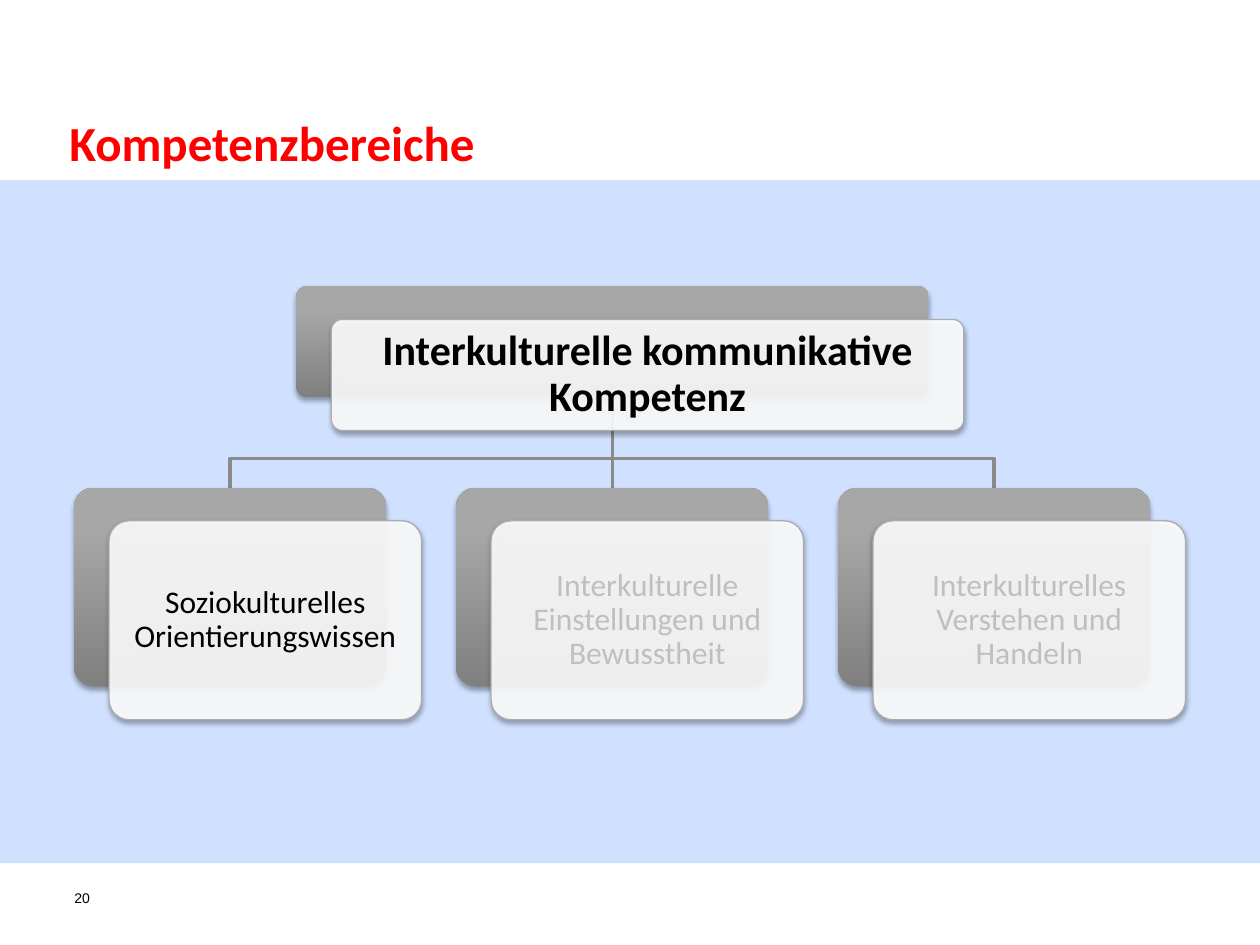
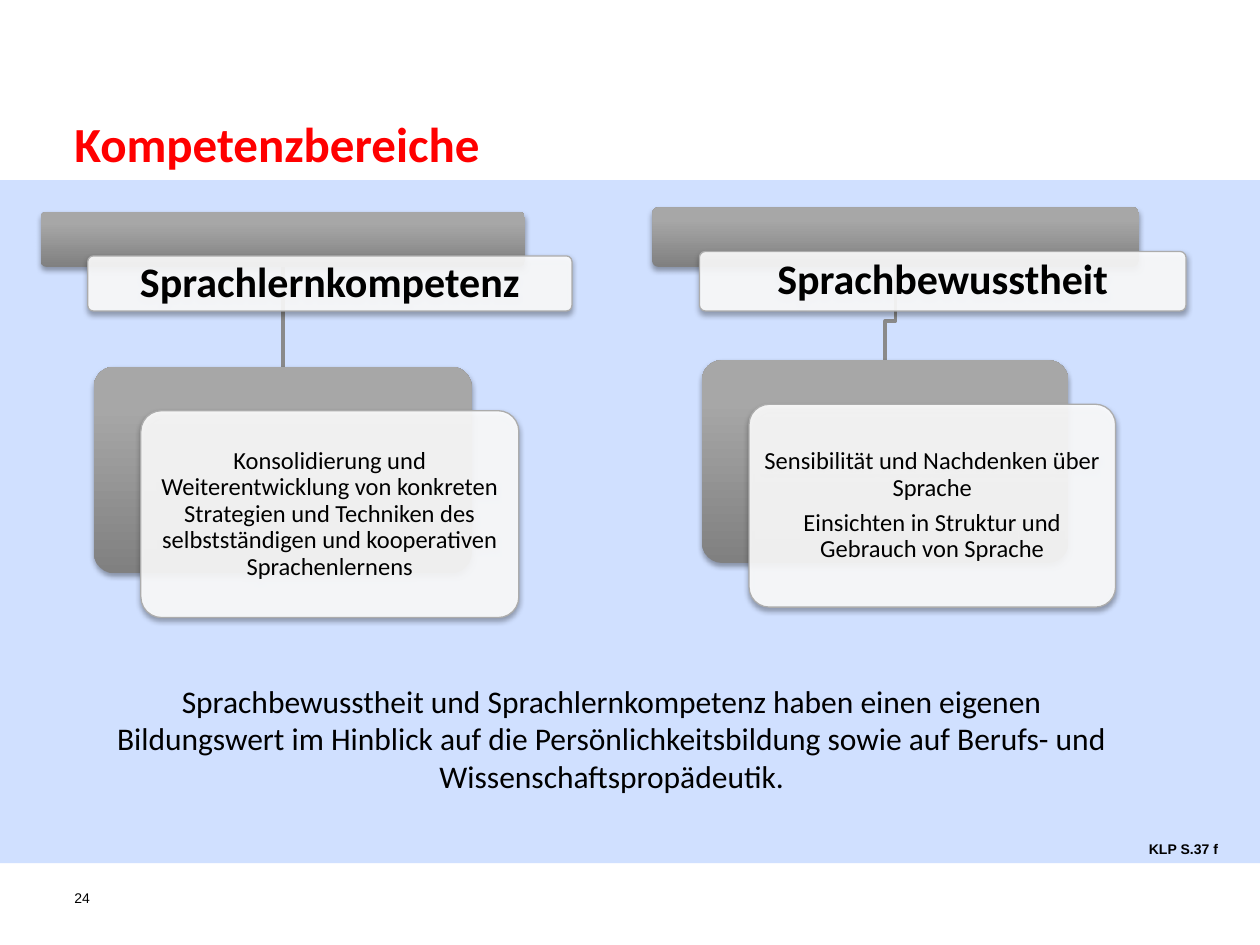
from pptx import Presentation
from pptx.dml.color import RGBColor
from pptx.enum.shapes import MSO_CONNECTOR as LINK, MSO_SHAPE as SHAPE
from pptx.enum.text import MSO_ANCHOR as ANCHOR, PP_ALIGN as ALIGN
from pptx.oxml import parse_xml
from pptx.oxml.ns import nsdecls, qn
from pptx.util import Cm, Pt

RED, BLACK, WHITE, PALE = "FF0000", "000000", "FFFFFF", "BFBFBF"
BLUE, DARK, LIGHT, EDGE, WIRE = "6699FF", "808080", "A7A7A7", "ACACAC", "8A8A8A"
rgb = RGBColor.from_string
A_NS = nsdecls("a")
SHADOW = (f'<a:outerShdw {A_NS} blurRad="39370" dist="22860" dir="5400000" rotWithShape="0">'
          '<a:srgbClr val="000000"><a:alpha val="35000"/></a:srgbClr></a:outerShdw>')


def write(shape, text, size=18, color=BLACK, font="Calibri", bold=False,
          align=ALIGN.LEFT, anchor=ANCHOR.TOP, pad=(0, 0), lead=None):
    frame = shape.text_frame
    frame.word_wrap = True
    frame.vertical_anchor = anchor
    frame.margin_left = frame.margin_right = Cm(pad[0])
    frame.margin_top = frame.margin_bottom = Cm(pad[1])
    for i, line in enumerate(text.split("\n")):
        para = frame.add_paragraph() if i else frame.paragraphs[0]
        para.text = line
        para.alignment = align
        if lead:
            para.line_spacing = lead
        if i:
            para.space_before = Pt(size * 0.35)
        para.font.size = Pt(size)
        para.font.name = font
        para.font.bold = bold
        para.font.color.rgb = rgb(color)


def add(slide, kind, box, fill, alpha=100):
    shape = slide.shapes.add_shape(kind, *map(Cm, box))
    shape.shadow.inherit = False
    shape.line.fill.background()
    shape.fill.solid()
    shape.fill.fore_color.rgb = rgb(fill)
    if alpha < 100:
        tint = shape.fill._xPr.find(".//" + qn("a:srgbClr"))
        tint.append(parse_xml(f'<a:alpha {A_NS} val="{alpha * 1000}"/>'))
    if kind == SHAPE.ROUNDED_RECTANGLE:
        shape.adjustments[0] = 0.1
        shape._element.spPr.find(qn("a:effectLst")).append(parse_xml(SHADOW))
    return shape


# Trees: head box and text, then the boxes, texts and colours below it
topics = ["Soziokulturelles Orientierungswissen",
          "Interkulturelle Einstellungen und Bewusstheit",
          "Interkulturelles Verstehen und Handeln"]
areas = [((1.49 + 7.7 * i, 9.83, 6.3, 4.01), topic, PALE if i else BLACK)
         for i, topic in enumerate(topics)]
culture = ((5.97, 5.77, 12.75, 2.24), "Interkulturelle kommunikative Kompetenz", areas)
learning = ((0.82, 4.27, 9.76, 1.11), "Sprachlernkompetenz", [
    ((1.89, 7.39, 7.62, 4.17),
     "Konsolidierung und Weiterentwicklung von konkreten Strategien und Techniken "
     "des selbstständigen und kooperativen Sprachenlernens", BLACK)])
aware = ((13.15, 4.18, 9.81, 1.2), "Sprachbewusstheit", [
    ((14.15, 7.26, 7.39, 4.09),
     "Sensibilität und Nachdenken über Sprache\n"
     "Einsichten in Struktur und Gebrauch von Sprache", BLACK)])

# Pages: number, title place, card shift, text size, text margin, trees
pages = [("20", (1.4, 2.26), (0.71, 0.67), 18, 0.18, [culture]),
         ("24", (1.5, 2.29), (0.95, 0.89), 14, 0.15, [learning, aware])]

deck = Presentation()
deck.slide_width, deck.slide_height = Cm(25.4), Cm(19.05)

for number, place, shift, size, pad, trees in pages:
    # Band, title and page number
    slide = deck.slides.add_slide(deck.slide_layouts[6])
    shapes = slide.shapes
    add(slide, SHAPE.RECTANGLE, (0, 3.63, 25.4, 13.77), BLUE, alpha=30)
    title = shapes.add_textbox(*map(Cm, place), Cm(22.4), Cm(1.2))
    write(title, "Kompetenzbereiche", size=28, color=RED, bold=True)
    page = shapes.add_textbox(Cm(1.5), Cm(17.93), Cm(0.81), Cm(0.94))
    write(page, number, size=8, font="Arial")

    # Lines from each head to the boxes below it
    for (left, top, width, height), _, kids in trees:
        x, y = left + width / 2, top + height
        for (kid_x, end, kid_w, _), _, _ in kids:
            goal = kid_x + kid_w / 2
            if abs(goal - x) < 0.05:
                wire = shapes.add_connector(LINK.STRAIGHT, Cm(x), Cm(y), Cm(x), Cm(end))
                wire._element.spPr.append(parse_xml(f"<a:effectLst {A_NS}/>"))
            else:
                bend = end - 0.83 * shift[0]
                path = shapes.build_freeform(Cm(x), Cm(y))
                path.add_line_segments([(Cm(x), Cm(bend)), (Cm(goal), Cm(bend)),
                                        (Cm(goal), Cm(end))], close=False)
                wire = path.convert_to_shape()
                wire.fill.background()
                wire.shadow.inherit = False
            wire.line.color.rgb = rgb(WIRE)
            wire.line.width = Pt(2)

    # Cards: a grey back and a white front that holds the text
    for head, name, kids in trees:
        cards = [(head, name, BLACK, 24, True, 0.25)]
        cards += [(*kid, size, False, pad) for kid in kids]
        for box, text, color, points, bold, inset in cards:
            back = add(slide, SHAPE.ROUNDED_RECTANGLE, box, LIGHT)
            back.fill.gradient()
            back.fill.gradient_angle = 90
            for stop, shade, spot in zip(back.fill.gradient_stops, (DARK, LIGHT), (0, 0.8)):
                stop.color.rgb = rgb(shade)
                stop.position = spot
            left, top, width, height = box
            front = add(slide, SHAPE.ROUNDED_RECTANGLE,
                        (left + shift[0], top + shift[1], width, height), WHITE, alpha=90)
            front.line.color.rgb = rgb(EDGE)
            front.line.width = Pt(0.75)
            write(front, text, size=points, color=color, bold=bold, align=ALIGN.CENTER,
                  anchor=ANCHOR.MIDDLE, pad=(inset, inset), lead=0.9)

# Source and closing remark on the last slide
source = shapes.add_textbox(Cm(22.91), Cm(16.81), Cm(1.96), Cm(0.6))
write(source, "KLP S.37 f", size=8, font="Arial", bold=True, pad=(0.25, 0.13))
remark = shapes.add_textbox(Cm(1.78), Cm(13.61), Cm(21.11), Cm(3.33))
write(remark, "Sprachbewusstheit und Sprachlernkompetenz haben einen eigenen Bildungswert "
      "im Hinblick auf die Persönlichkeitsbildung sowie auf Berufs- und "
      "Wissenschaftspropädeutik.", align=ALIGN.CENTER, pad=(0.25, 0.13))

deck.save("out.pptx")
